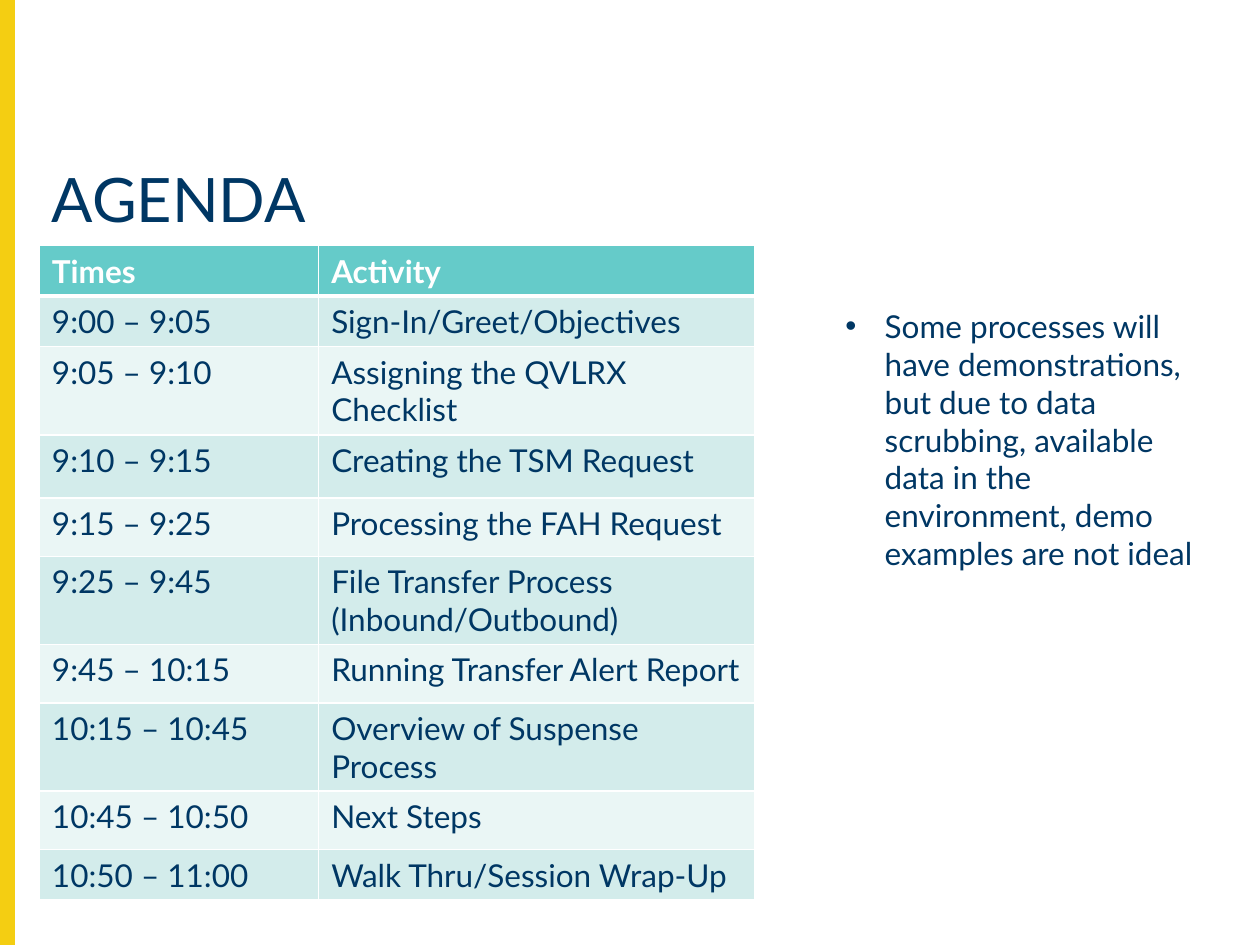
from lxml import etree
from pptx import Presentation
from pptx.dml.color import RGBColor
from pptx.enum import shapes, text
from pptx.oxml import ns
from pptx.util import Pt

FONT = "Lato"
COLORS = {
    "navy": "003764", "white": "FFFFFF", "yellow": "F4CE12",
    "header": "65CBC9", "band_dark": "D3ECEB", "band_light": "EAF6F5",
}
TITLE = "AGENDA"
NOTE = ("Some processes will have demonstrations, but due to data scrubbing, "
        "available data in the environment, demo examples are not ideal")
# Times, activity, row height in points
AGENDA = [
    ("Times", "Activity", 26.7),
    ("9:00 – 9:05", "Sign-In/Greet/Objectives", 26.7),
    ("9:05 – 9:10", "Assigning the QVLRX Checklist", 26.7),
    ("9:10 – 9:15", "Creating the TSM Request", 36),
    ("9:15 – 9:25", "Processing the FAH Request", 33.4),
    ("9:25 – 9:45", "File Transfer Process (Inbound/Outbound)", 33.4),
    ("9:45 – 10:15", "Running Transfer Alert Report", 33.4),
    ("10:15 – 10:45", "Overview of Suspense Process", 33.4),
    ("10:45 – 10:50", "Next Steps", 33.4),
    ("10:50 – 11:00", "Walk Thru/Session Wrap-Up", 26.7),
]
COLUMN_WIDTHS = (159.6, 249.2)
LEFT = 22.5


def color(name):
    return RGBColor.from_string(COLORS[name])


def write(frame, content, size, ink="navy", bold=False):
    frame.text = content
    font = frame.paragraphs[0].runs[0].font
    font.name, font.size, font.bold = FONT, Pt(size), bold
    font.color.rgb = color(ink)


def add_text(slide, content, size, left, top, width, height):
    frame = slide.shapes.add_textbox(Pt(left), Pt(top), Pt(width), Pt(height)).text_frame
    frame.word_wrap = True
    frame.vertical_anchor = text.MSO_ANCHOR.TOP
    write(frame, content, size)
    return frame


def set_borders(cell, bottom_width):
    properties = cell._tc.get_or_add_tcPr()
    widths = {"a:lnL": 1, "a:lnR": 1, "a:lnT": 1, "a:lnB": bottom_width}
    for position, (tag, width) in enumerate(widths.items()):
        line = etree.Element(ns.qn(tag), w=str(Pt(width)))
        fill = etree.SubElement(line, ns.qn("a:solidFill"))
        etree.SubElement(fill, ns.qn("a:srgbClr"), val=COLORS["white"])
        properties.insert(position, line)


def add_bullet(paragraph, indent):
    properties = paragraph._p.get_or_add_pPr()
    properties.set("marL", str(Pt(indent)))
    properties.set("indent", str(-Pt(indent)))
    etree.SubElement(properties, ns.qn("a:buFont"), typeface="Arial")
    etree.SubElement(properties, ns.qn("a:buChar"), char="•")


def add_agenda(slide):
    heights = [row[2] for row in AGENDA]
    table = slide.shapes.add_table(
        len(AGENDA), len(COLUMN_WIDTHS), Pt(LEFT), Pt(140.4),
        Pt(sum(COLUMN_WIDTHS)), Pt(sum(heights))).table
    for column, width in zip(table.columns, COLUMN_WIDTHS):
        column.width = Pt(width)
    for r, (times, activity, height) in enumerate(AGENDA):
        table.rows[r].height = Pt(height)
        is_header = r == 0
        band = "header" if is_header else "band_dark" if r % 2 else "band_light"
        for cell, content in zip(table.rows[r].cells, (times, activity)):
            write(cell.text_frame, content, 18, "white" if is_header else "navy", is_header)
            cell.fill.solid()
            cell.fill.fore_color.rgb = color(band)
            set_borders(cell, 3 if is_header else 1)


def main():
    deck = Presentation()
    deck.slide_width, deck.slide_height = Pt(720), Pt(540)
    slide = deck.slides.add_slide(deck.slide_layouts[6])

    stripe = slide.shapes.add_shape(shapes.MSO_SHAPE.RECTANGLE, 0, 0, Pt(8), Pt(540))
    stripe.shadow.inherit = False
    stripe.fill.solid()
    stripe.fill.fore_color.rgb = stripe.line.color.rgb = color("yellow")
    stripe.line.width = Pt(1)

    title = add_text(slide, TITLE, 35, LEFT, 93.6, 672, 57)
    title.paragraphs[0].line_spacing = 0.9
    add_agenda(slide)
    note = add_text(slide, NOTE, 18, 476, 172, 219, 160)
    add_bullet(note.paragraphs[0], 22.5)

    deck.save("out.pptx")


if __name__ == "__main__":
    main()
